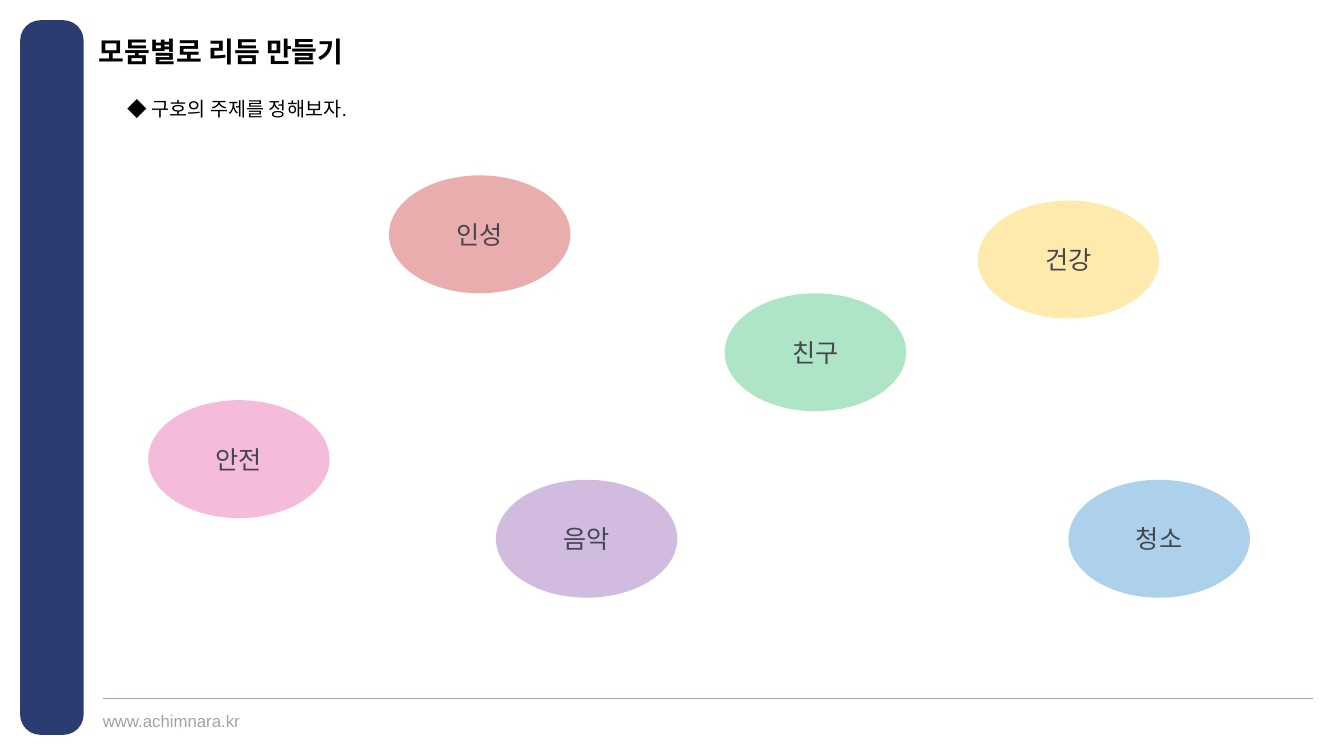
from dataclasses import dataclass
from typing import Any

from lxml.etree import SubElement
from pptx import Presentation
from pptx.dml.color import RGBColor
from pptx.enum.shapes import MSO_CONNECTOR, MSO_SHAPE
from pptx.enum.text import MSO_ANCHOR, MSO_AUTO_SIZE, PP_ALIGN
from pptx.oxml.ns import qn
from pptx.util import Pt

HUES = {
    "navy": "2B3C71", "gray": "9EA4AA", "black": "000000", "ink": "454551",
    "pink": "E32D91", "red": "C00000", "green": "00B050",
    "gold": "FFC000", "purple": "7030A0", "blue": "0070C0",
}
SANS = "Arial"
KOREAN = "Noto Sans CJK KR"
WIDE, HIGH = 129.6, 84.24
ALPHA = 32
FLUSH = {"margin_left": 0, "margin_top": 0, "margin_right": 0, "margin_bottom": 0}


@dataclass
class Topic:
    label: str
    left: float
    top: float
    hue: str


TOPICS = [
    Topic("안전", 105.84, 285.84, "pink"),
    Topic("인성", 277.92, 125.28, "red"),
    Topic("친구", 517.68, 209.52, "green"),
    Topic("건강", 698.4, 143.28, "gold"),
    Topic("음악", 354.24, 342.72, "purple"),
    Topic("청소", 763.2, 342.72, "blue"),
]


def tint(name: str) -> RGBColor:
    return RGBColor.from_string(HUES[name])


def apply(item: Any, form: dict[str, Any]) -> None:
    for key, value in form.items():
        setattr(item, key, value)


def place(shape: Any, left: float, top: float, wide: float, high: float) -> None:
    apply(shape, {"left": Pt(left), "top": Pt(top), "width": Pt(wide), "height": Pt(high)})


def write(shape: Any, text: str, hue: str, frame: dict[str, Any],
          para: dict[str, Any], font: dict[str, Any]) -> None:
    body = shape.text_frame
    body.text = text
    apply(body, frame)
    first = body.paragraphs[0]
    apply(first, para)
    apply(first.runs[0].font, font)
    first.runs[0].font.color.rgb = tint(hue)


def block(slide: Any, kind: MSO_SHAPE, box: tuple[float, ...], hue: str) -> Any:
    shape = slide.shapes.add_shape(kind, *map(Pt, box))
    shape.shadow.inherit = False
    shape.fill.solid()
    shape.fill.fore_color.rgb = tint(hue)
    shape.line.fill.background()
    return shape


def draw(slide: Any, topic: Topic) -> None:
    shape = block(slide, MSO_SHAPE.OVAL, (topic.left, topic.top, WIDE, HIGH), topic.hue)
    color = shape._element.spPr.find(qn("a:solidFill")).find(qn("a:srgbClr"))
    SubElement(color, qn("a:alpha")).set("val", str(ALPHA * 1000))
    write(shape, topic.label, "ink", {"vertical_anchor": MSO_ANCHOR.MIDDLE},
          {"alignment": PP_ALIGN.CENTER}, {"name": KOREAN, "size": Pt(18)})


def main() -> None:
    deck = Presentation()
    apply(deck, {"slide_width": Pt(960), "slide_height": Pt(540)})
    slide = deck.slides.add_slide(deck.slide_layouts[5])

    bar = block(slide, MSO_SHAPE.ROUNDED_RECTANGLE, (14.4, 14.4, 45.36, 510.48), "navy")
    bar.adjustments[0] = 0.32

    rule = slide.shapes.add_connector(
        MSO_CONNECTOR.STRAIGHT, Pt(938.16), Pt(498.96), Pt(73.44), Pt(498.96))
    rule.line.width = Pt(0.5)
    rule.line.color.rgb = tint("gray")
    SubElement(rule._element.spPr, qn("a:effectLst"))

    site = slide.shapes.add_textbox(Pt(73.44), Pt(507.6), Pt(108), Pt(14.4))
    write(site, "www.achimnara.kr", "gray", {**FLUSH, "word_wrap": True},
          {}, {"name": SANS, "size": Pt(12)})

    title = slide.shapes.title
    place(title, 70.56, 28.08, 566.64, 20.16)
    write(title, "모둠별로 리듬 만들기", "black",
          {**FLUSH, "word_wrap": True, "auto_size": MSO_AUTO_SIZE.NONE,
           "vertical_anchor": MSO_ANCHOR.MIDDLE},
          {"alignment": PP_ALIGN.LEFT, "line_spacing": 0.9},
          {"name": SANS, "size": Pt(20), "bold": True})

    task = slide.shapes.add_textbox(Pt(84.24), Pt(57.6), Pt(630.72), Pt(29.52))
    write(task, "◆ 구호의 주제를 정해보자.", "black",
          {"word_wrap": True, "auto_size": MSO_AUTO_SIZE.SHAPE_TO_FIT_TEXT},
          {"line_spacing": 1.5}, {"name": SANS, "size": Pt(14)})

    for topic in TOPICS:
        draw(slide, topic)

    deck.save("out.pptx")


if __name__ == "__main__":
    main()
